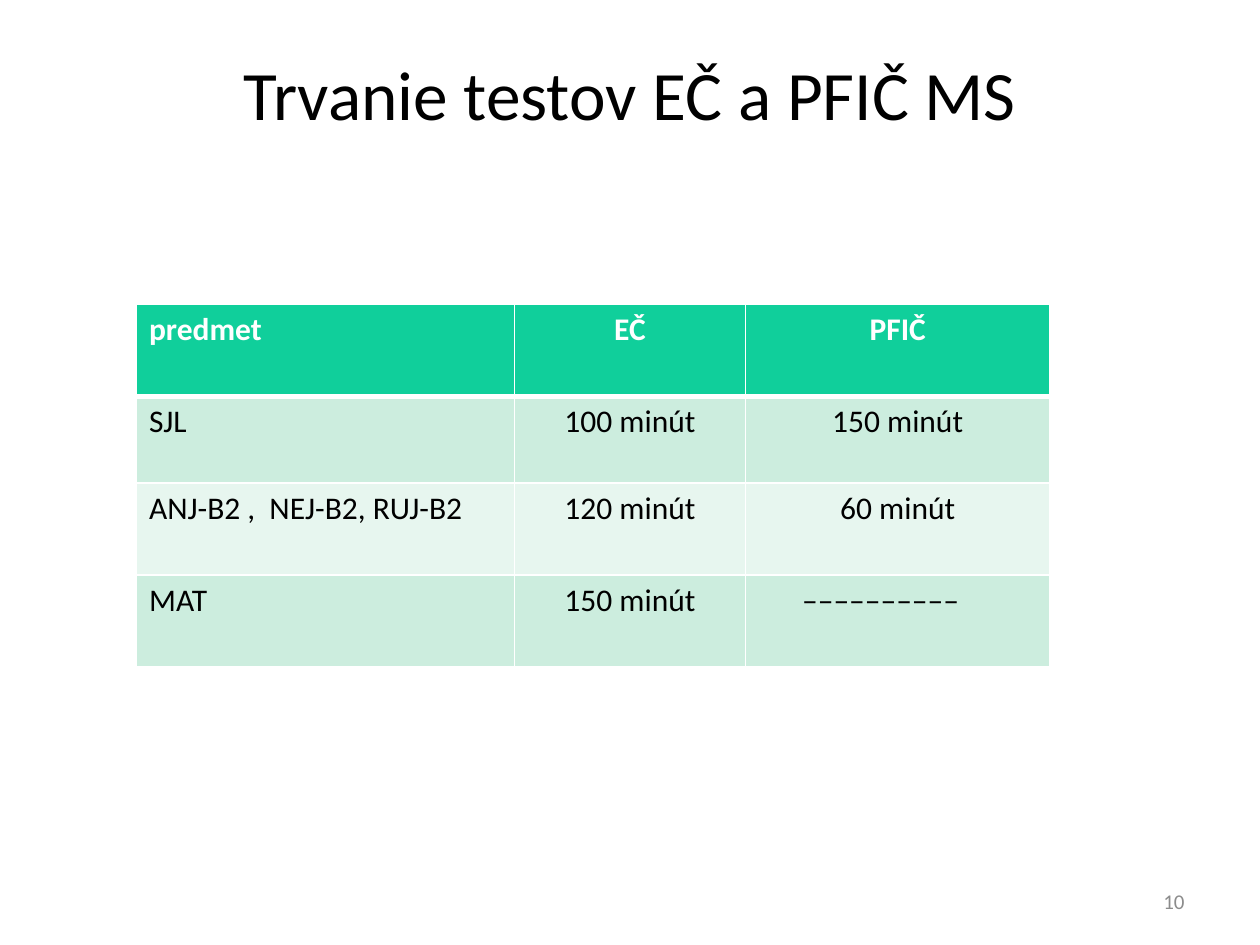
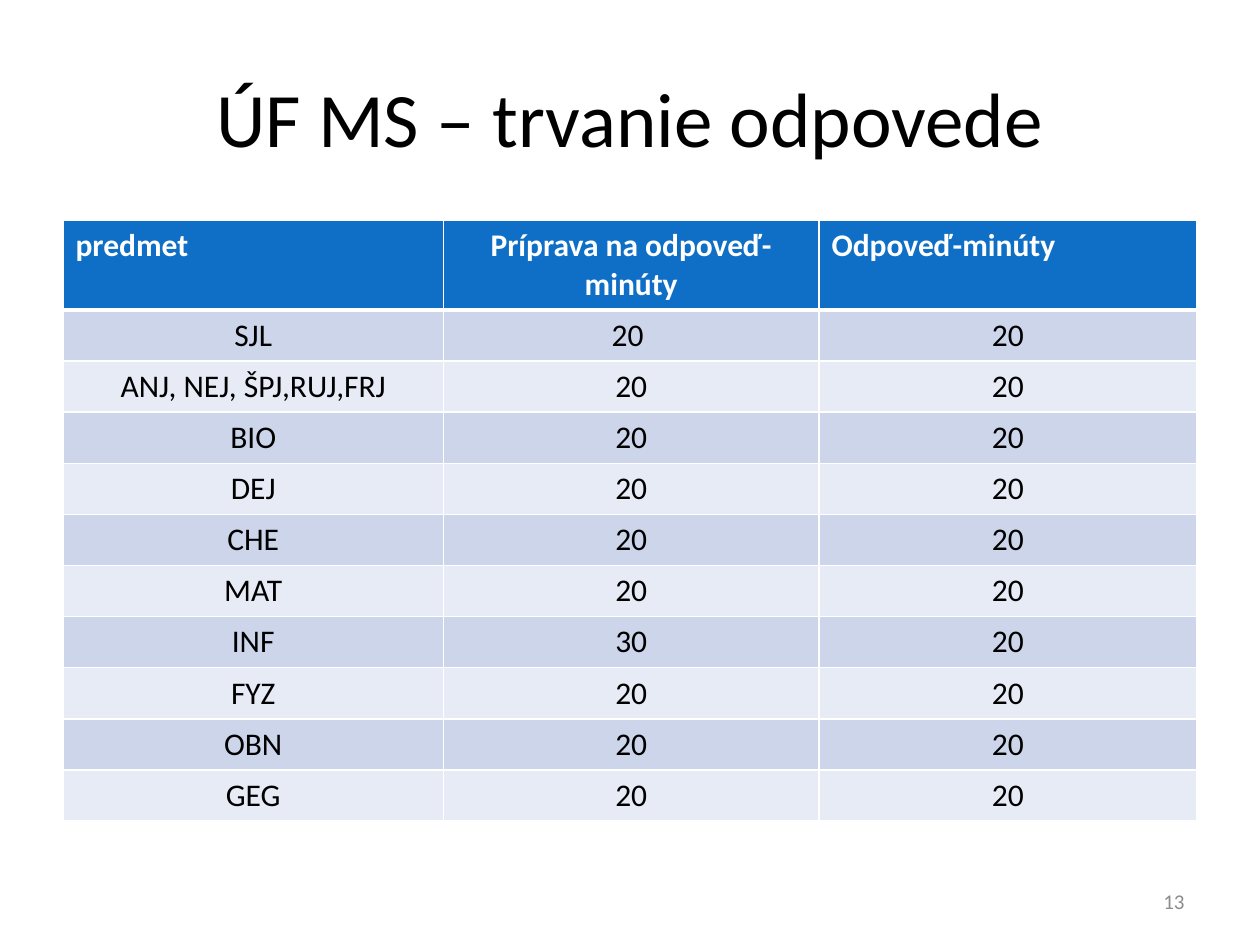
from dataclasses import dataclass

from lxml.etree import SubElement
from pptx import Presentation
from pptx.dml.color import RGBColor
from pptx.enum.text import MSO_ANCHOR, MSO_AUTO_SIZE, PP_ALIGN
from pptx.oxml.ns import qn
from pptx.slide import Slide
from pptx.table import _Cell as Cell
from pptx.text.text import TextFrame
from pptx.util import Emu, Inches, Pt

FONT = "Calibri"
BLACK = RGBColor(0x00, 0x00, 0x00)
WHITE = RGBColor(0xFF, 0xFF, 0xFF)
GREY = RGBColor(0x8C, 0x8C, 0x8C)
GREEN = RGBColor(0x10, 0xCF, 0x9B)
GREEN_MID = RGBColor(0xCC, 0xED, 0xDE)
GREEN_PALE = RGBColor(0xE7, 0xF6, 0xEF)
BLUE = RGBColor(0x0F, 0x6F, 0xC6)
BLUE_MID = RGBColor(0xCC, 0xD5, 0xEA)
BLUE_PALE = RGBColor(0xE7, 0xEB, 0xF5)

LEFT, CENTER, RIGHT = PP_ALIGN.LEFT, PP_ALIGN.CENTER, PP_ALIGN.RIGHT

# The slide is a grid of 120 columns by 90 rows.
SLIDE_W, SLIDE_H = Inches(10), Inches(7.5)
COLUMNS, ROWS = 120, 90


def cols(n: float) -> Emu:
    return Emu(round(SLIDE_W * n / COLUMNS))


def rows(n: float) -> Emu:
    return Emu(round(SLIDE_H * n / ROWS))


@dataclass(frozen=True)
class Box:
    left: float
    top: float
    width: float
    height: float

    def emu(self) -> tuple[Emu, Emu, Emu, Emu]:
        return cols(self.left), rows(self.top), cols(self.width), rows(self.height)


@dataclass(frozen=True)
class Title:
    text: str
    size: float
    height: float
    bottom_inset: float = 0.6


@dataclass(frozen=True)
class Palette:
    header: RGBColor
    odd: RGBColor
    even: RGBColor


@dataclass(frozen=True)
class TimeTable:
    box: Box
    widths: list[float]
    heights: list[float]
    palette: Palette
    header_aligns: list[PP_ALIGN]
    body_aligns: list[PP_ALIGN]
    cells: list[list[str]]


NUMBER_BOX = Box(86, 83.4, 28, 4.8)
DASHES = "––––––––––"
DASH_INDENT = 5.4

TEST_TIMES = TimeTable(
    box=Box(13, 29, 87, 34.5),
    widths=[36, 22, 29],
    heights=[8.75, 8.25, 8.75, 8.75],
    palette=Palette(GREEN, GREEN_MID, GREEN_PALE),
    header_aligns=[LEFT, CENTER, CENTER],
    body_aligns=[LEFT, CENTER, CENTER],
    cells=[
        ["predmet", "EČ", "PFIČ"],
        ["SJL", "100 minút", "150 minút"],
        ["ANJ-B2 ,  NEJ-B2, RUJ-B2", "120 minút", "60 minút"],
        ["MAT", "150 minút", DASHES],
    ],
)

PREPARATION = {
    "SJL": "20 ", "ANJ, NEJ, ŠPJ,RUJ,FRJ": "20", "BIO": "20", "DEJ": "20",
    "CHE": "20", "MAT": "20", "INF": "30", "FYZ": "20", "OBN": "20", "GEG": "20",
}
ANSWER = "20"

ANSWER_TIMES = TimeTable(
    box=Box(6, 21, 108, 57.12),
    widths=[36.24, 35.76, 36],
    heights=[4.87] * (len(PREPARATION) + 1),
    palette=Palette(BLUE, BLUE_MID, BLUE_PALE),
    header_aligns=[LEFT, CENTER, LEFT],
    body_aligns=[CENTER, CENTER, CENTER],
    cells=[["predmet", "Príprava na odpoveď-minúty", "Odpoveď-minúty"]]
    + [[subject, time, ANSWER] for subject, time in PREPARATION.items()],
)


def write(tf: TextFrame, text: str, size: float, color: RGBColor,
          align: PP_ALIGN, bold: bool = False) -> None:
    tf.text = text
    p = tf.paragraphs[0]
    p.alignment = align
    for r in p.runs:
        r.font.name, r.font.size, r.font.bold = FONT, Pt(size), bold
        r.font.color.rgb = color


def add_title(s: Slide, title: Title) -> None:
    sp = s.shapes.title
    sp.left, sp.top, sp.width, sp.height = Box(6, 3.6, 108, title.height).emu()
    tf = sp.text_frame
    write(tf, title.text, title.size, BLACK, CENTER)
    tf.auto_size = MSO_AUTO_SIZE.NONE
    tf.vertical_anchor = MSO_ANCHOR.MIDDLE
    tf.margin_bottom = rows(title.bottom_inset)


def add_number(s: Slide, number: int) -> None:
    tf = s.shapes.add_textbox(*NUMBER_BOX.emu()).text_frame
    tf.word_wrap = True
    tf.vertical_anchor = MSO_ANCHOR.MIDDLE
    write(tf, str(number), 12, GREY, RIGHT)


def set_borders(cell: Cell, top: float, bottom: float) -> None:
    """Draw white cell borders; the side ones are 1 pt wide."""
    tc_pr = cell._tc.get_or_add_tcPr()
    for side, width in (("L", 1), ("R", 1), ("T", top), ("B", bottom)):
        ln = SubElement(tc_pr, qn(f"a:ln{side}"), w=str(Pt(width)))
        fill = SubElement(ln, qn("a:solidFill"))
        SubElement(fill, qn("a:srgbClr"), val=str(WHITE))


def add_time_table(s: Slide, spec: TimeTable) -> None:
    table = s.shapes.add_table(
        len(spec.heights), len(spec.widths), *spec.box.emu()).table
    for column, width in zip(table.columns, spec.widths):
        column.width = cols(width)
    for row, height in zip(table.rows, spec.heights):
        row.height = rows(height)

    for i, texts in enumerate(spec.cells):
        header = i == 0
        aligns = spec.header_aligns if header else spec.body_aligns
        band = spec.palette.odd if i % 2 else spec.palette.even
        for j, text in enumerate(texts):
            cell = table.cell(i, j)
            set_borders(cell, top=3 if i == 1 else 1, bottom=3 if header else 1)
            cell.fill.solid()
            cell.fill.fore_color.rgb = spec.palette.header if header else band
            dashes = text == DASHES
            if dashes:
                cell.margin_left = cols(DASH_INDENT)
            write(cell.text_frame, text, 18, WHITE if header else BLACK,
                  LEFT if dashes else aligns[j], bold=header)


def main() -> None:
    prs = Presentation()
    prs.slide_width, prs.slide_height = SLIDE_W, SLIDE_H
    title_only = prs.slide_layouts[5]
    slides = [
        (Title("Trvanie testov EČ a PFIČ MS", 39.6, 17.4, 7.6), TEST_TIMES, 10),
        (Title("ÚF MS – trvanie odpovede", 44, 15), ANSWER_TIMES, 13),
    ]
    for title, time_table, number in slides:
        s = prs.slides.add_slide(title_only)
        add_title(s, title)
        add_time_table(s, time_table)
        add_number(s, number)
    prs.save("out.pptx")


if __name__ == "__main__":
    main()
